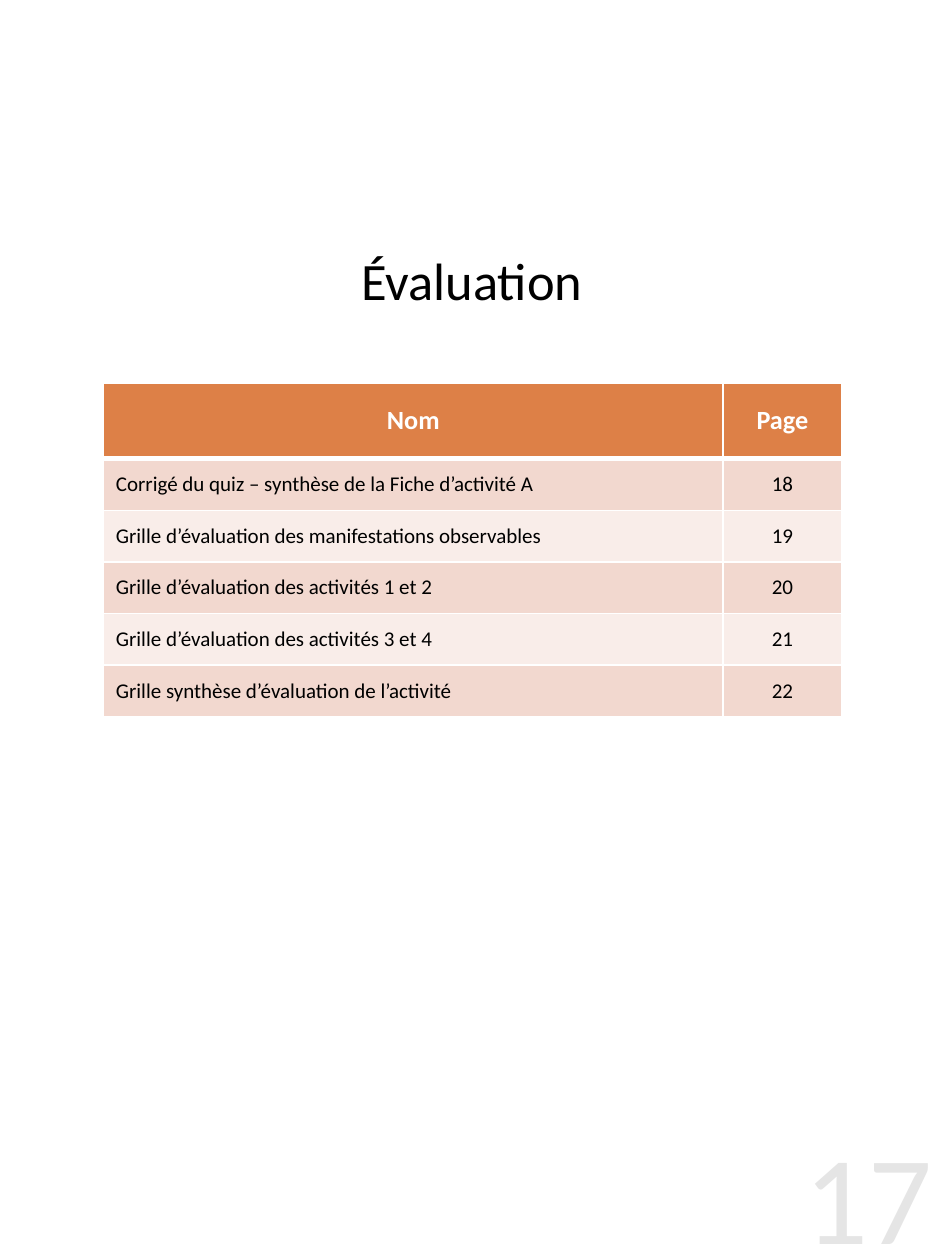
from lxml import etree
from pptx import Presentation
from pptx.dml.color import RGBColor
from pptx.enum.text import MSO_ANCHOR, PP_ALIGN
from pptx.oxml.ns import qn
from pptx.util import Inches, Pt

CENTER, LEFT, RIGHT = PP_ALIGN.CENTER, PP_ALIGN.LEFT, PP_ALIGN.RIGHT
MIDDLE, TOP = MSO_ANCHOR.MIDDLE, MSO_ANCHOR.TOP

BLACK = RGBColor(0x00, 0x00, 0x00)
WHITE = RGBColor(0xFF, 0xFF, 0xFF)
ORANGE = RGBColor(0xDD, 0x80, 0x47)
BANDS = (RGBColor(0xF2, 0xD8, 0xCF), RGBColor(0xF9, 0xED, 0xE9))
PALE_GREY = RGBColor(0xE5, 0xE5, 0xE5)

TITLE_ONLY = 5
HEADINGS = ("Nom", "Page")
FIRST_PAGE = 18
DOCUMENTS = (
    "Corrigé du quiz – synthèse de la Fiche d’activité A",
    "Grille d’évaluation des manifestations observables",
    "Grille d’évaluation des activités 1 et 2",
    "Grille d’évaluation des activités 3 et 4",
    "Grille synthèse d’évaluation de l’activité",
)


class ContentsPage:
    font = "Calibri"

    def __init__(self, prs):
        self.slide = prs.slides.add_slide(prs.slide_layouts[TITLE_ONLY])

    def set_text(self, frame, text, size, color, align, anchor=MIDDLE, bold=False):
        frame.text = text
        frame.word_wrap = True
        frame.vertical_anchor = anchor
        paragraph = frame.paragraphs[0]
        paragraph.alignment = align
        font = paragraph.runs[0].font
        font.name, font.size, font.bold = self.font, Pt(size), bold
        font.color.rgb = color

    def title(self, text, left, top, width, height):
        heading = self.slide.shapes.title
        heading.left, heading.top = Inches(left), Inches(top)
        heading.width, heading.height = Inches(width), Inches(height)
        self.set_text(heading.text_frame, text, 30, BLACK, CENTER)

    def page_number(self, text, left, top, width, height):
        box = self.slide.shapes.add_textbox(
            Inches(left), Inches(top), Inches(width), Inches(height))
        frame = box.text_frame
        frame.margin_left = frame.margin_right = 0
        frame.margin_top = frame.margin_bottom = 0
        self.set_text(frame, text, 72, PALE_GREY, RIGHT, TOP)

    def borders(self, cell, widths):
        properties = cell._tc.get_or_add_tcPr()
        for index, (side, width) in enumerate(widths.items()):
            line = etree.Element(qn("a:" + side), w=str(Pt(width)))
            fill = etree.SubElement(line, qn("a:solidFill"))
            etree.SubElement(fill, qn("a:srgbClr"), val=str(WHITE))
            properties.insert(index, line)

    def table(self, rows, left, top, col_widths, row_heights):
        table = self.slide.shapes.add_table(
            len(rows), len(col_widths), Inches(left), Inches(top),
            Inches(sum(col_widths)), Inches(sum(row_heights))).table
        for column, width in zip(table.columns, col_widths):
            column.width = Inches(width)
        for r, (values, height) in enumerate(zip(rows, row_heights)):
            table.rows[r].height = Inches(height)
            header = r == 0
            for c, value in enumerate(values):
                cell = table.cell(r, c)
                align = CENTER if header or c else LEFT
                self.set_text(cell.text_frame, value, 15 if header else 12,
                              WHITE if header else BLACK, align, bold=header)
                cell.vertical_anchor = MIDDLE
                cell.fill.solid()
                cell.fill.fore_color.rgb = ORANGE if header else BANDS[(r - 1) % 2]
                self.borders(cell, {"lnL": 1, "lnR": 1,
                                    "lnT": 3 if r == 1 else 1,
                                    "lnB": 3 if header else 1})


def main():
    prs = Presentation()
    prs.slide_width, prs.slide_height = Inches(7.5), Inches(10)
    page = ContentsPage(prs)

    # Section title
    page.title("Évaluation", 1.41, 1.74, 4.67, 0.95)

    # Documents and the pages they start on
    entries = [(name, str(number))
               for number, name in enumerate(DOCUMENTS, FIRST_PAGE)]
    page.table([HEADINGS] + entries, 0.82, 3.04, (4.92, 0.94),
               [0.6] + [0.41] * len(entries))

    # Large page number in the corner
    page.page_number(str(FIRST_PAGE - 1), 6, 8.88, 1.4, 1.12)

    prs.save("out.pptx")


if __name__ == "__main__":
    main()
